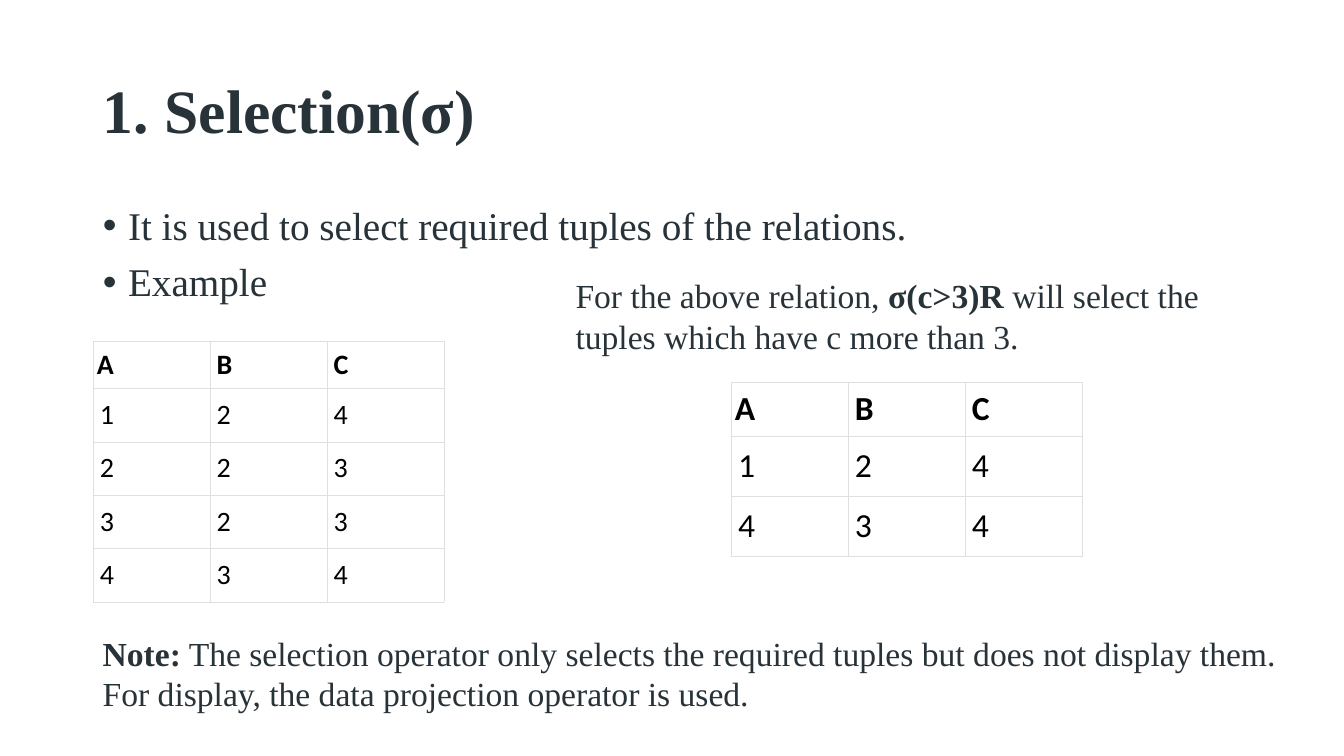
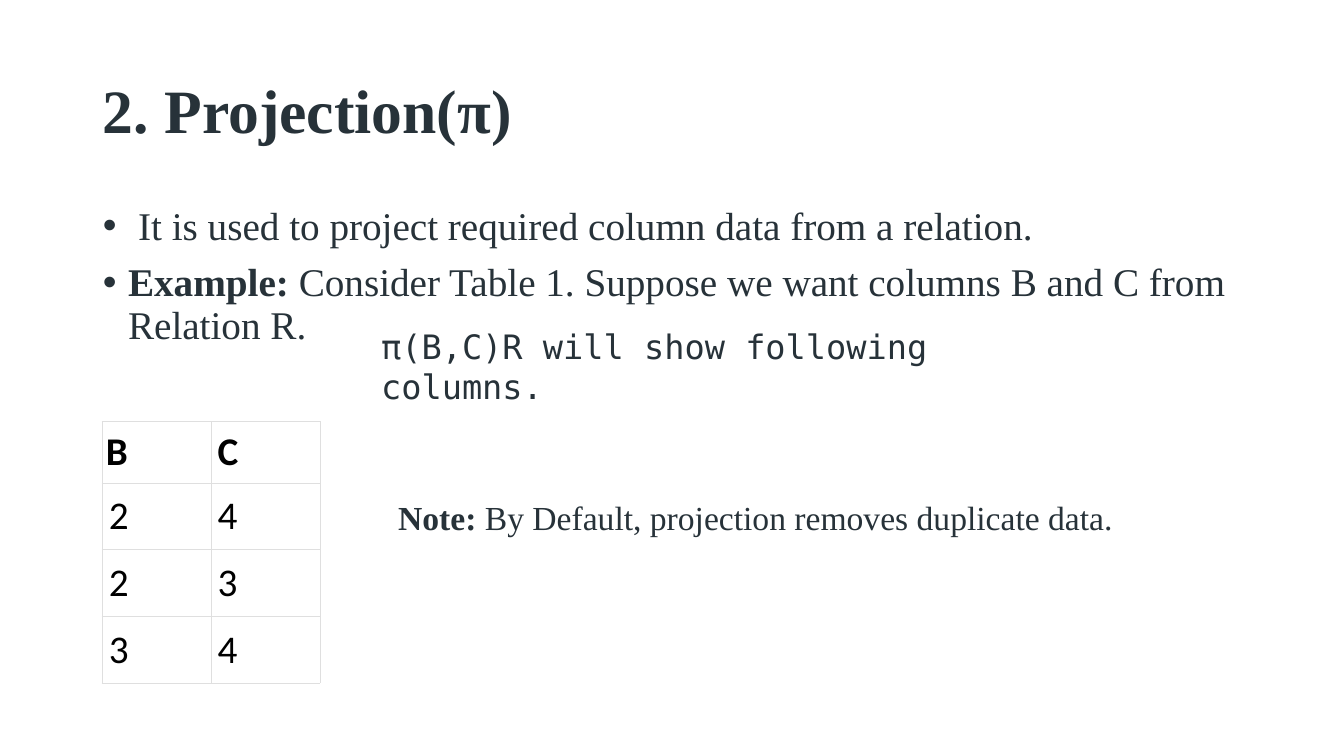
from dataclasses import dataclass

from lxml.etree import SubElement
from pptx import Presentation
from pptx.dml.color import RGBColor
from pptx.enum.text import MSO_ANCHOR, MSO_AUTO_SIZE, PP_ALIGN
from pptx.oxml.ns import qn
from pptx.util import Inches, Pt


@dataclass(frozen=True)
class Theme:
    ink: str = "273239"
    table_ink: str = "000000"
    paper: str = "FFFFFF"
    border: str = "DFDFDF"
    serif: str = "Times New Roman"
    sans: str = "Calibri"
    mono: str = "DejaVu Sans Mono"
    title_size: int = 44
    list_size: int = 28
    text_size: int = 24
    border_width: float = 0.15
    header_padding: float = 4.8
    cell_padding: float = 6.8
    line_factor: float = 1.22


class RelationDeck:
    """Holds the theme, the deck and the slide being filled."""

    def __init__(self, theme):
        self.theme = theme
        self.deck = Presentation()
        self.deck.slide_width = Inches(13.33)
        self.deck.slide_height = Inches(7.5)
        self.page = None

    # Shared helpers
    def place(self, shape, left, top, width, height):
        shape.left, shape.top = Inches(left), Inches(top)
        shape.width, shape.height = Inches(width), Inches(height)

    def add_spans(self, para, spans, size, font=None, color=None):
        """Fill a paragraph from (text, bold) pairs."""
        for text, bold in spans:
            span = para.add_run()
            span.text = text
            span.font.name = font or self.theme.serif
            span.font.size = Pt(size)
            span.font.bold = bold
            span.font.color.rgb = RGBColor.from_string(color or self.theme.ink)

    def add_bullet(self, para, indent):
        properties = para._p.get_or_add_pPr()
        properties.set("marL", str(Inches(indent)))
        properties.set("indent", str(-Inches(indent)))
        SubElement(properties, qn("a:buFont"), typeface="Arial")
        SubElement(properties, qn("a:buChar"), char="•")

    def add_borders(self, cell):
        properties = cell._tc.get_or_add_tcPr()
        for side in ("a:lnL", "a:lnR", "a:lnT", "a:lnB"):
            line = SubElement(properties, qn(side), w=str(Pt(self.theme.border_width)))
            fill = SubElement(line, qn("a:solidFill"))
            SubElement(fill, qn("a:srgbClr"), val=self.theme.border)

    # Slide elements
    def add_page(self, title):
        self.page = self.deck.slides.add_slide(self.deck.slide_layouts[1])
        box = self.page.shapes.title
        self.place(box, 0.92, 0.4, 11.5, 1.45)
        frame = box.text_frame
        frame.auto_size = MSO_AUTO_SIZE.NONE
        frame.vertical_anchor = MSO_ANCHOR.MIDDLE
        para = frame.paragraphs[0]
        para.alignment = PP_ALIGN.LEFT
        para.line_spacing = 0.9
        self.add_spans(para, [(title, True)], self.theme.title_size)

    def add_list(self, items, height):
        """Items are (indent, spans) pairs."""
        box = self.page.placeholders[1]
        self.place(box, 0.92, 2, 11.5, height)
        frame = box.text_frame
        frame.auto_size = MSO_AUTO_SIZE.NONE
        for number, (indent, spans) in enumerate(items):
            para = frame.add_paragraph() if number else frame.paragraphs[0]
            para.line_spacing = 0.9
            para.space_before = Pt(10)
            self.add_bullet(para, indent)
            self.add_spans(para, spans, self.theme.list_size)

    def add_text(self, left, top, width, height, spans, font=None):
        box = self.page.shapes.add_textbox(
            Inches(left), Inches(top), Inches(width), Inches(height))
        frame = box.text_frame
        frame.word_wrap = True
        frame.auto_size = MSO_AUTO_SIZE.SHAPE_TO_FIT_TEXT
        self.add_spans(frame.paragraphs[0], spans, self.theme.text_size, font)
        return frame

    def add_formula(self, left, top, width, height, text):
        frame = self.add_text(left, top, width, height, [(text, False)], self.theme.mono)
        frame.vertical_anchor = MSO_ANCHOR.MIDDLE
        frame.margin_left = frame.margin_right = frame.margin_top = 0
        frame.margin_bottom = Inches(0.07)

    def add_relation(self, left, top, column_width, size, rows):
        """Draw a table; each row is a string with one character per cell."""
        theme = self.theme
        columns = len(rows[0])
        paddings = [theme.header_padding] + [theme.cell_padding] * (len(rows) - 1)
        heights = [Pt(size * theme.line_factor + 2 * padding) for padding in paddings]
        table = self.page.shapes.add_table(
            len(rows), columns, Inches(left), Inches(top),
            Inches(column_width * columns), sum(heights)).table
        table.first_row = table.horz_banding = False
        for column in table.columns:
            column.width = Inches(column_width)
        for row_number, values in enumerate(rows):
            table.rows[row_number].height = heights[row_number]
            header = row_number == 0
            for column_number, value in enumerate(values):
                cell = table.cell(row_number, column_number)
                side = 0.04 if header and column_number == 0 else 0.07
                cell.margin_left = cell.margin_right = Inches(side)
                cell.margin_top = cell.margin_bottom = Pt(paddings[row_number])
                cell.vertical_anchor = MSO_ANCHOR.MIDDLE
                self.add_borders(cell)
                cell.fill.solid()
                cell.fill.fore_color.rgb = RGBColor.from_string(theme.paper)
                self.add_spans(cell.text_frame.paragraphs[0], [(value, header)],
                               size, theme.sans, theme.table_ink)


def main():
    show = RelationDeck(Theme())

    # Selection
    show.add_page("1. Selection(σ)")
    show.add_list([
        (0.25, [("It is used to select required tuples of the relations.", False)]),
        (0.25, [("Example", False)]),
    ], height=5.5)
    show.add_relation(0.92, 3.38, 1.16, 20, ["ABC", "124", "223", "323", "434"])
    show.add_text(5.61, 2.68, 6.67, 0.91, [
        ("For the above relation, ", False),
        ("σ(c>3)R", True),
        (" will select the tuples which have c more than 3.", False),
    ])
    show.add_relation(7.25, 3.79, 1.16, 24, ["ABC", "124", "434"])
    show.add_text(0.92, 6.23, 11.96, 0.91, [
        ("Note:", True),
        (" The selection operator only selects the required tuples but does not "
         "display them. For display, the data projection operator is used.", False),
    ])

    # Projection
    show.add_page("2. Projection(π)")
    show.add_list([
        (0.35, [("It is used to project required column data from a relation.", False)]),
        (0.25, [("Example: ", True),
                ("Consider Table 1. Suppose we want columns B and C from Relation R.",
                 False)]),
    ], height=4.76)
    show.add_formula(3.78, 3.43, 7.22, 0.47, "π(B,C)R will show following columns.")
    show.add_relation(1.01, 4.18, 1.08, 28, ["BC", "24", "23", "34"])
    show.add_text(3.85, 4.88, 8.02, 0.5, [
        ("Note: ", True),
        ("By Default, projection removes duplicate data.", False),
    ])

    show.deck.save("out.pptx")


if __name__ == "__main__":
    main()
